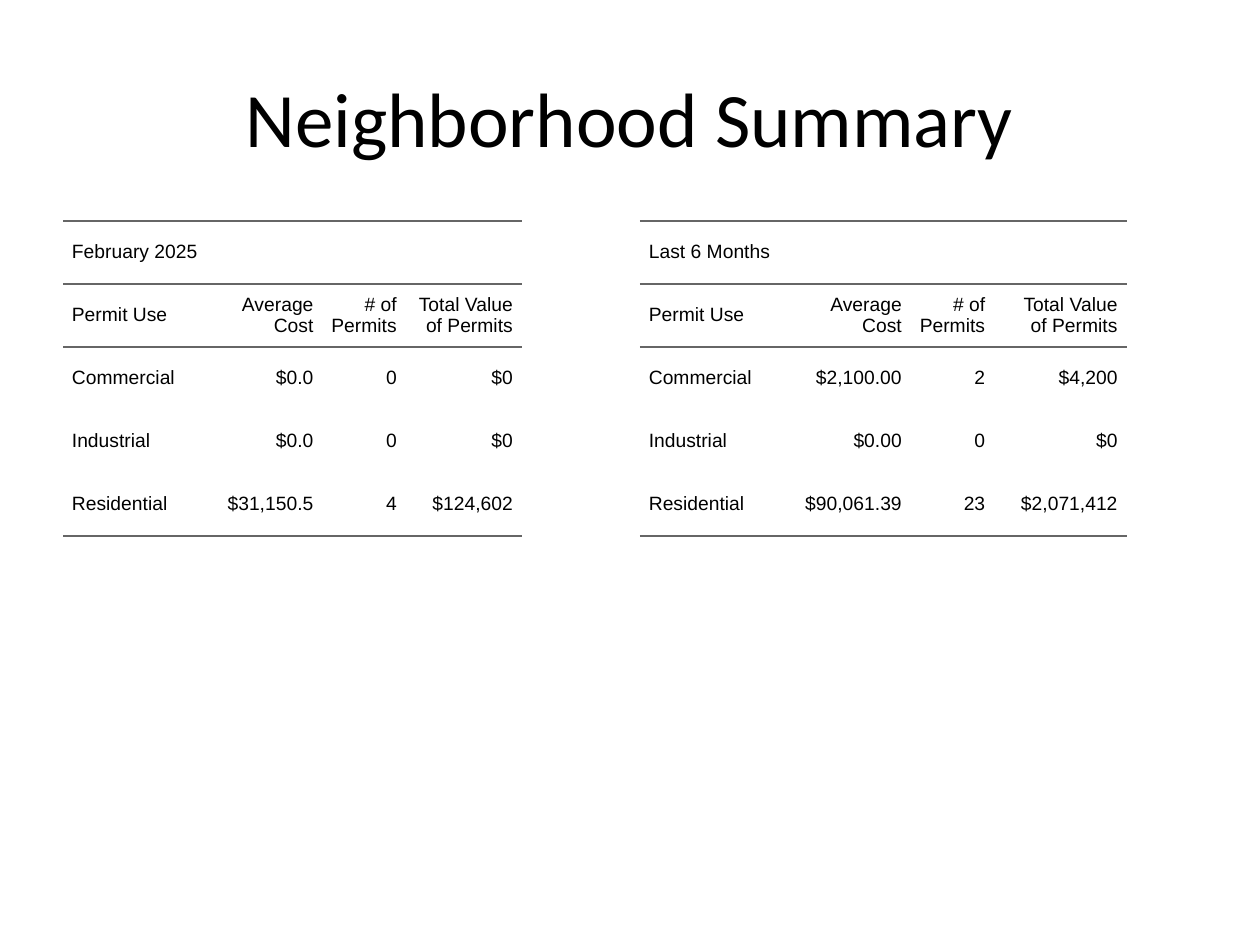
from lxml import etree
from pptx import Presentation
from pptx import util as u
from pptx.dml.color import RGBColor
from pptx.enum import text
from pptx.oxml.ns import qn

BLACK = RGBColor(0x00, 0x00, 0x00)
RULE_GREY = RGBColor(0x66, 0x66, 0x66)
PADDING = u.Cm(0.18)
ROW_HEIGHT = u.Cm(1.27)

HEADINGS = ["Permit Use", "Average Cost", "# of Permits", "Total Value of Permits"]
SUMMARIES = [
    # period, left edge, column widths, figures
    ("February 2025", 1.27, [2.79, 2.44, 1.68, 2.34], [
        ["Commercial", "$0.0", "0", "$0"],
        ["Industrial", "$0.0", "0", "$0"],
        ["Residential", "$31,150.5", "4", "$124,602"],
    ]),
    ("Last 6 Months", 12.9, [2.79, 2.67, 1.68, 2.67], [
        ["Commercial", "$2,100.00", "2", "$4,200"],
        ["Industrial", "$0.00", "0", "$0"],
        ["Residential", "$90,061.39", "23", "$2,071,412"],
    ]),
]


def add_text(paragraph, words, font_name, size):
    run = paragraph.add_run()
    run.text = words
    run.font.name = font_name
    run.font.size = u.Pt(size)
    run.font.color.rgb = BLACK


def set_borders(cell, ruled_sides):
    """Rule the given sides and clear the others, ahead of the cell fill."""
    properties = cell._tc.get_or_add_tcPr()
    for position, side in enumerate(["lnL", "lnR", "lnT", "lnB"]):
        line = etree.Element(qn(f"a:{side}"))
        if side in ruled_sides:
            line.set("w", str(u.Pt(1.5)))
            fill = etree.SubElement(line, qn("a:solidFill"))
            etree.SubElement(fill, qn("a:srgbClr"), val=str(RULE_GREY))
        else:
            etree.SubElement(line, qn("a:noFill"))
        properties.insert(position, line)


presentation = Presentation()
presentation.slide_width = u.Cm(25.4)
presentation.slide_height = u.Cm(19.05)
slide = presentation.slides.add_slide(presentation.slide_layouts[6])

# Permit tables
for period, left, widths, figures in SUMMARIES:
    rows = [[period, "", "", ""], HEADINGS, *figures]
    frame = slide.shapes.add_table(
        len(rows), len(widths), u.Cm(left), u.Cm(4.45),
        u.Cm(11.23), ROW_HEIGHT * len(rows))
    table = frame.table
    table.first_row = False
    table.horz_banding = False
    for column, width in zip(table.columns, widths):
        column.width = u.Cm(width)
    for row in table.rows:
        row.height = ROW_HEIGHT
    table.cell(0, 0).merge(table.cell(0, len(widths) - 1))

    for row_index, row in enumerate(rows):
        if row_index < 2:
            ruled_sides = ["lnT", "lnB"]
        elif row_index == 2:
            ruled_sides = ["lnT"]
        elif row_index == len(rows) - 1:
            ruled_sides = ["lnB"]
        else:
            ruled_sides = []
        for column_index, words in enumerate(row):
            cell = table.cell(row_index, column_index)
            cell.fill.background()
            set_borders(cell, ruled_sides)
            cell.vertical_anchor = text.MSO_ANCHOR.MIDDLE
            cell.margin_left = cell.margin_right = 0
            cell.margin_top = cell.margin_bottom = PADDING
            if not words:
                continue
            paragraph = cell.text_frame.paragraphs[0]
            paragraph.alignment = text.PP_ALIGN.RIGHT if column_index else text.PP_ALIGN.LEFT
            paragraph.space_before = paragraph.space_after = u.Pt(5)
            paragraph_properties = paragraph._p.get_or_add_pPr()
            for margin in ("marL", "marR"):
                paragraph_properties.set(margin, str(PADDING))
            paragraph_properties.set("indent", "0")
            add_text(paragraph, words, "Arial", 11)

    # The frame keeps the size of the content area
    frame.width, frame.height = u.Cm(11.23), u.Cm(12.57)

# Title
title = slide.shapes.add_textbox(u.Cm(1.27), u.Cm(0.76), u.Cm(22.86), u.Cm(3.18))
title.text_frame.word_wrap = True
title.text_frame.vertical_anchor = text.MSO_ANCHOR.MIDDLE
paragraph = title.text_frame.paragraphs[0]
paragraph.alignment = text.PP_ALIGN.CENTER
add_text(paragraph, "Neighborhood Summary", "Calibri", 44)

presentation.save("out.pptx")
